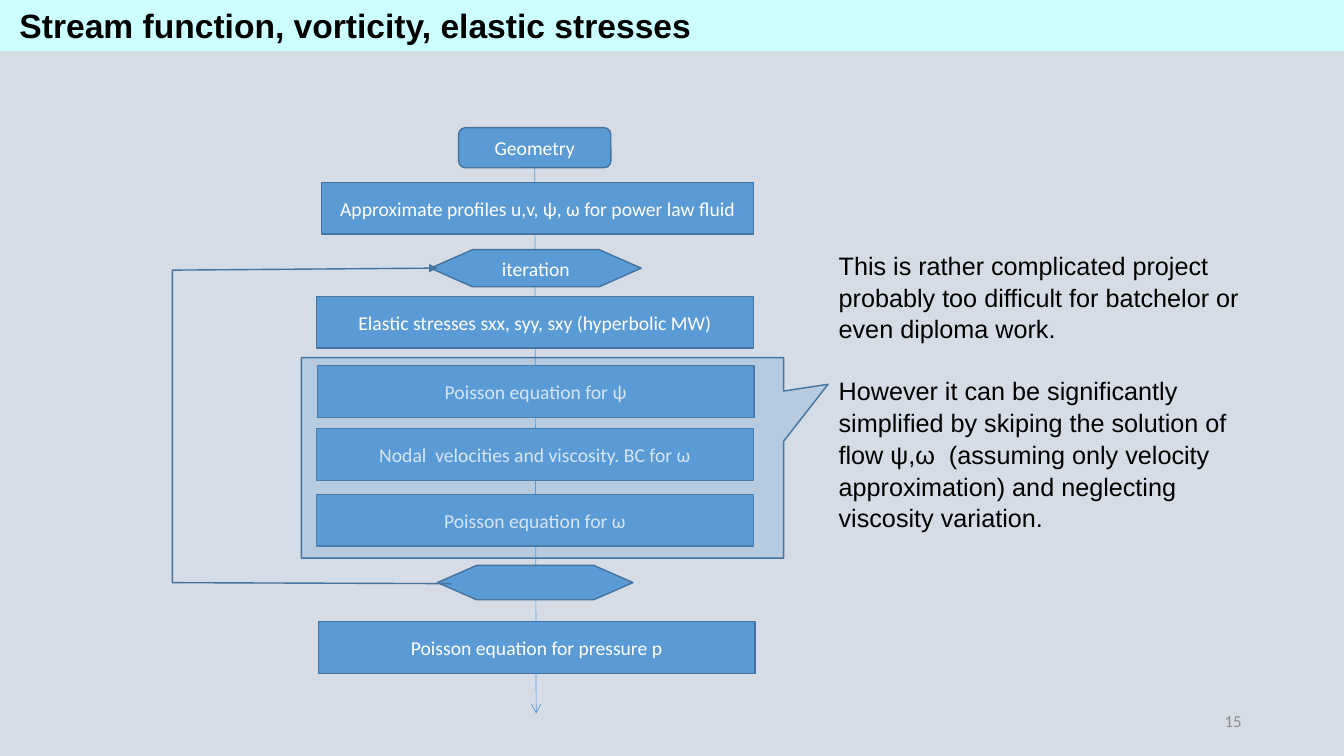
import pptx
import pptx.dml.color
import pptx.enum.dml
import pptx.enum.shapes
import pptx.enum.text
import pptx.oxml
import pptx.oxml.ns
import pptx.util
from lxml import etree

Pt = pptx.util.Pt
RGBColor = pptx.dml.color.RGBColor
SHAPE = pptx.enum.shapes.MSO_SHAPE
ALIGN = pptx.enum.text.PP_ALIGN
ANCHOR = pptx.enum.text.MSO_ANCHOR
qn = pptx.oxml.ns.qn

BACKGROUND = RGBColor(0xD6, 0xDC, 0xE5)
TITLE_FILL = RGBColor(0xCC, 0xFF, 0xFF)
BLUE = RGBColor(0x5B, 0x9B, 0xD5)
DARK_BLUE = RGBColor(0x43, 0x73, 0x9E)
BLACK = RGBColor(0, 0, 0)
WHITE = RGBColor(0xFF, 0xFF, 0xFF)
GREY = RGBColor(0x8C, 0x8C, 0x8C)

# Content
TITLE = "Stream function, vorticity, elastic stresses"
PAGE_NUMBER = "15"
COMMENTS = [
    "This is rather complicated project probably too difficult for batchelor or even diploma work.",
    "However it can be significantly simplified by skiping the solution of flow ψ,ω  "
    "(assuming only velocity approximation) and neglecting viscosity variation.",
]
# Flow chart steps: shape, text, left, top, width, height
START, STEP, LOOP = (SHAPE.FLOWCHART_ALTERNATE_PROCESS, SHAPE.FLOWCHART_PROCESS,
                     SHAPE.FLOWCHART_PREPARATION)
STEP_WIDTH, STEP_HEIGHT = 311.8, 36.9
STEPS = [
    (START, "Geometry", 327.6, 91.2, 108.7, 28.6),
    (STEP, "Approximate profiles u,v, ψ, ω for power law fluid", 229.9, 130.3, 308.4, STEP_HEIGHT),
    (LOOP, "iteration", 307.5, 178.3, 150.5, 26.6),
    (STEP, "Elastic stresses sxx, syy, sxy (hyperbolic MW)", 226.3, 211.8, STEP_WIDTH, STEP_HEIGHT),
    (STEP, "Poisson equation for ψ", 226.8, 261.2, STEP_WIDTH, STEP_HEIGHT),
    (STEP, "Nodal  velocities and viscosity. BC for ω", 226.3, 306.2, STEP_WIDTH, STEP_HEIGHT),
    (STEP, "Poisson equation for ω", 226.3, 353.2, STEP_WIDTH, STEP_HEIGHT),
    (LOOP, "", 312.5, 403.9, 139.7, 24.5),
    (STEP, "Poisson equation for pressure p", 227.5, 444, STEP_WIDTH, STEP_HEIGHT),
]
LOOP_BACK = [(322.6, 416.9), (123.1, 416.2), (123.1, 193), (312.5, 191.5)]
FLOW_END = (383, 509.8)


def write(box, texts, size, font, color, align, anchor, bold=False):
    frame = box.text_frame
    frame.word_wrap = True
    frame.vertical_anchor = anchor
    frame.text = "\n".join(texts)
    for para in frame.paragraphs:
        para.alignment = align
        for span in para.runs:
            span.font.size = Pt(size)
            span.font.name = font
            span.font.bold = bold
            span.font.color.rgb = color


def add_block(page, kind, left, top, width, height, fill=BLUE, outline=DARK_BLUE):
    block = page.shapes.add_shape(kind, Pt(left), Pt(top), Pt(width), Pt(height))
    block.shadow.inherit = False
    block.fill.solid()
    block.fill.fore_color.rgb = fill
    if outline is None:
        block.line.fill.background()
    else:
        set_line(block, outline, 1)
    return block


def set_line(shape, color, width, arrow=None):
    shape.line.color.rgb = color
    shape.line.width = Pt(width)
    if arrow:
        outline = shape.element.spPr.find(qn("a:ln"))
        etree.SubElement(outline, qn("a:tailEnd")).set("type", arrow)


def add_text(page, texts, left, top, width, height, *style):
    box = page.shapes.add_textbox(Pt(left), Pt(top), Pt(width), Pt(height))
    write(box, texts, *style)
    return box


def main():
    deck = pptx.Presentation()
    deck.slide_width, deck.slide_height = Pt(960), Pt(540)
    page = deck.slides.add_slide(deck.slide_layouts[6])
    page.background.fill.solid()
    page.background.fill.fore_color.rgb = BACKGROUND

    # Title band
    band = add_block(page, SHAPE.RECTANGLE, 0, 0, 960, 36.4, TITLE_FILL, None)
    band.text_frame.margin_left = Pt(13.9)
    write(band, [TITLE], 24, "Arial", BLACK, ALIGN.LEFT, ANCHOR.MIDDLE, True)

    # Flow line, behind the steps
    end_x, end_y = FLOW_END
    flow = page.shapes.add_connector(pptx.enum.shapes.MSO_CONNECTOR.STRAIGHT,
                                     Pt(end_x), Pt(0), Pt(end_x), Pt(end_y))
    set_line(flow, BLUE, 0.5, "arrow")
    etree.SubElement(flow.element.spPr, qn("a:effectLst"))

    # Steps
    for kind, text, left, top, width, height in STEPS:
        block = add_block(page, kind, left, top, width, height)
        if text:
            write(block, [text], 14, "Calibri", WHITE, ALIGN.CENTER, ANCHOR.MIDDLE)
        if kind == START:
            flow.begin_connect(block, 2)

    # Return path of the iteration
    points = [(Pt(x), Pt(y)) for x, y in LOOP_BACK]
    builder = page.shapes.build_freeform(*points[0], scale=1.0)
    builder.add_line_segments(points[1:], close=False)
    loop_back = builder.convert_to_shape()
    loop_back.shadow.inherit = False
    loop_back.fill.background()
    set_line(loop_back, DARK_BLUE, 1, "triangle")

    # Page number and comments
    add_text(page, [PAGE_NUMBER], 678, 500.5, 216, 28.8,
             12, "Calibri", GREY, ALIGN.RIGHT, ANCHOR.MIDDLE)
    comments = add_text(page, COMMENTS, 592, 174.2, 324, 203.8,
                        18, "Arial", BLACK, ALIGN.LEFT, ANCHOR.TOP)
    for para in comments.text_frame.paragraphs:
        para.line_spacing = 1.05
    comments.text_frame.paragraphs[1].space_before = Pt(21.6)

    # Translucent callout over the flow solution
    callout = add_block(page, SHAPE.RECTANGULAR_CALLOUT, 215.3, 255.5, 344.5, 143.2)
    callout.adjustments[0] = 0.592
    callout.adjustments[1] = -0.367
    color = callout.element.spPr.find(qn("a:solidFill")).find(qn("a:srgbClr"))
    etree.SubElement(color, qn("a:alpha")).set("val", "25000")

    deck.save("out.pptx")


if __name__ == "__main__":
    main()
